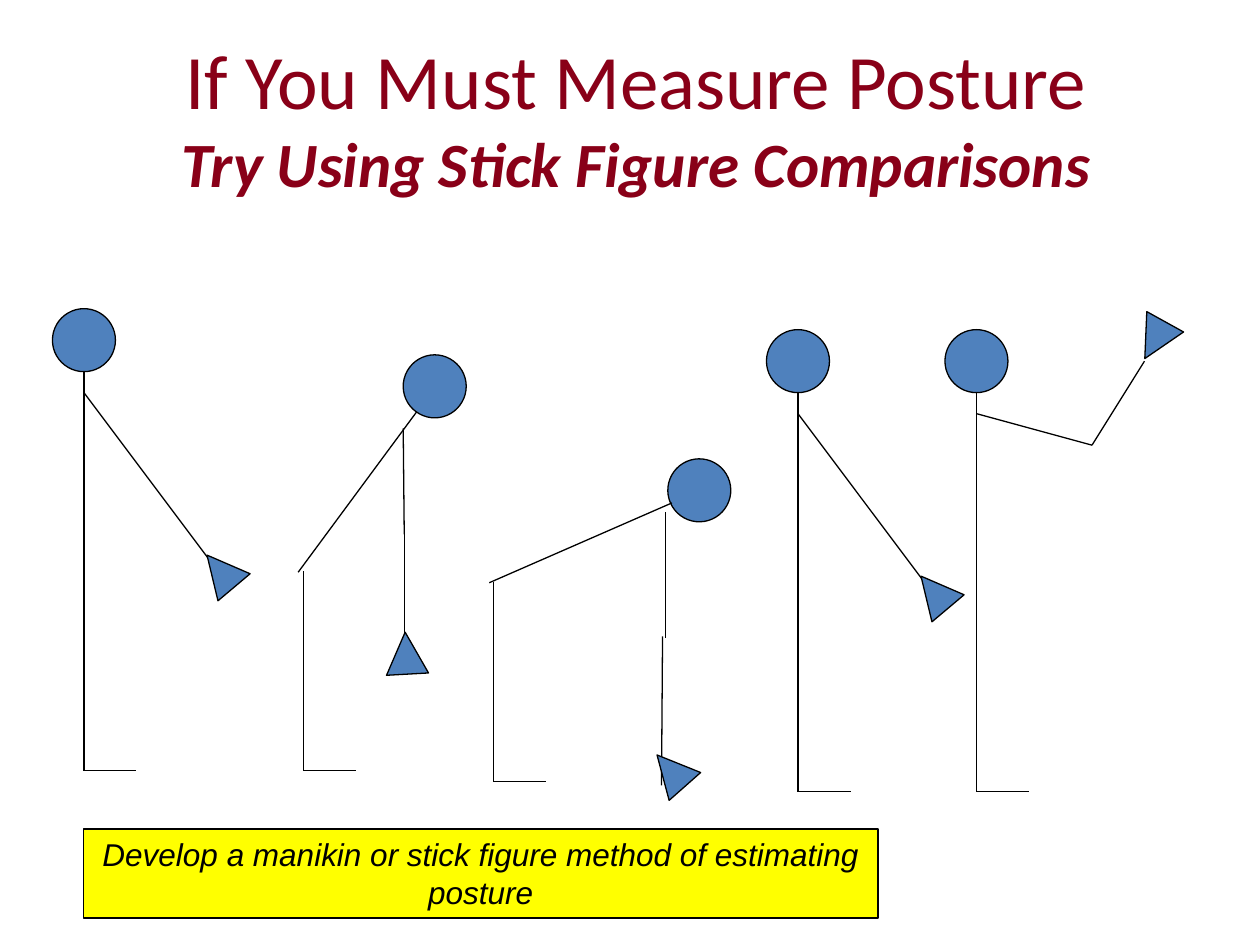
from itertools import pairwise
from lxml.etree import SubElement
from pptx import Presentation
from pptx.dml.color import RGBColor
from pptx.enum.shapes import MSO_CONNECTOR, MSO_SHAPE
from pptx.enum.text import MSO_ANCHOR, MSO_AUTO_SIZE, PP_ALIGN
from pptx.oxml.ns import qn
from pptx.util import Inches, Pt

UNIT = Inches(1) / 12  # grid of twelve columns and rows to the inch
HEAD, HAND = 6, 4

# Points are columns and rows from each figure's own corner.
SPINE = [(3, 6), (3, 25), (3, 44), (8, 44)]
UPRIGHT = dict(head=(0, 0, 0), limbs=[SPINE, [(3, 8), (9, 16), (15, 24)]],
               hand=(14, 23, 320))
RAISED = dict(head=(0, 0, 0), limbs=[SPINE, [(3, 8), (14, 11), (19, 3)]],
              hand=(18, -1, 209))
BENT = dict(head=(10, 4.4, 36.8),
            limbs=[[(0.5, 25), (0.5, 44), (5.5, 44)],
                   [(11.3, 9.8), (0, 25.1)],
                   [(10, 11.4), (10.1, 21.5), (10.1, 31.4)]],
            hand=(8.3, 30.8, 356.8))
STOOPED = dict(head=(17, 13.3, 66.2),
               limbs=[[(0.4, 25), (0.4, 44), (5.4, 44)],
                      [(17.4, 17.5), (0, 25.1)],
                      [(16.8, 18.4), (16.8, 30.4)],
                      [(16.5, 30.2), (16.4, 44.4)]],
               hand=(15.3, 41, 318.5))
FIGURES = [(5, 29.4, UPRIGHT), (28.4, 29.4, BENT), (90, 31.4, RAISED),
           (73, 31.4, UPRIGHT), (46.6, 30.4, STOOPED)]


def grid(*cells):
    return [round(cell * UNIT) for cell in cells]


def color(hex_text):
    return RGBColor.from_string(hex_text)


def paint(shape, fill, width):
    shape.shadow.inherit = False
    shape.fill.solid()
    shape.fill.fore_color.rgb = color(fill)
    shape.line.color.rgb = color("000000")
    shape.line.width = Pt(width)


def add_part(group, kind, left, top, size, turn):
    part = group.shapes.add_shape(kind, *grid(left, top, size, size))
    part.rotation = turn
    paint(part, "4F81BD", 0.75)


def add_limb(group, points):
    for start, end in pairwise(points):
        bone = group.shapes.add_connector(MSO_CONNECTOR.STRAIGHT,
                                          *grid(*start, *end))
        bone.line.color.rgb = color("000000")
        bone.line.width = Pt(0.75)
        SubElement(bone._element.spPr, qn("a:effectLst"))


def add_figure(slide, left, top, pose):
    """Draw a head, limbs and a hand as one group with its corner at left, top."""
    group = slide.shapes.add_group_shape()
    x, y, turn = pose["head"]
    add_part(group, MSO_SHAPE.OVAL, left + x, top + y, HEAD, turn)
    for limb in pose["limbs"]:
        add_limb(group, [(left + x, top + y) for x, y in limb])
    x, y, turn = pose["hand"]
    add_part(group, MSO_SHAPE.ISOSCELES_TRIANGLE, left + x, top + y, HAND, turn)


def set_title(slide, box):
    title = slide.shapes.title
    title.left, title.top, title.width, title.height = grid(*box)
    frame = title.text_frame
    frame.auto_size = MSO_AUTO_SIZE.NONE
    frame.vertical_anchor = MSO_ANCHOR.TOP
    para = frame.paragraphs[0]
    para.alignment = PP_ALIGN.CENTER
    para.font.name = "Calibri"
    para.font.color.rgb = color("890018")
    first = para.add_run()
    first.text = "If You Must Measure Posture"
    first.font.size = Pt(44)
    para.add_line_break()
    second = para.add_run()
    second.text = "Try Using Stick Figure Comparisons"
    second.font.size = Pt(36)
    second.font.bold = second.font.italic = True


def add_caption(slide, box):
    note = slide.shapes.add_textbox(*grid(*box))
    paint(note, "FFFF00", 1)
    frame = note.text_frame
    frame.word_wrap = True
    frame.auto_size = MSO_AUTO_SIZE.SHAPE_TO_FIT_TEXT
    para = frame.paragraphs[0]
    para.text = "Develop a manikin or stick figure method of estimating posture"
    para.alignment = PP_ALIGN.CENTER
    para.font.name = "Arial"
    para.font.size = Pt(18)
    para.font.italic = True
    para.font.color.rgb = color("000000")


def main():
    deck = Presentation()
    deck.slide_width, deck.slide_height = Inches(10), Inches(7.5)
    slide = deck.slides.add_slide(deck.slide_layouts[5])
    set_title(slide, (8.6, 2.5, 104, 22))
    for left, top, pose in FIGURES:
        add_figure(slide, left, top, pose)
    add_caption(slide, (7.95, 78.95, 75.65, 8.5))
    deck.save("out.pptx")


if __name__ == "__main__":
    main()
